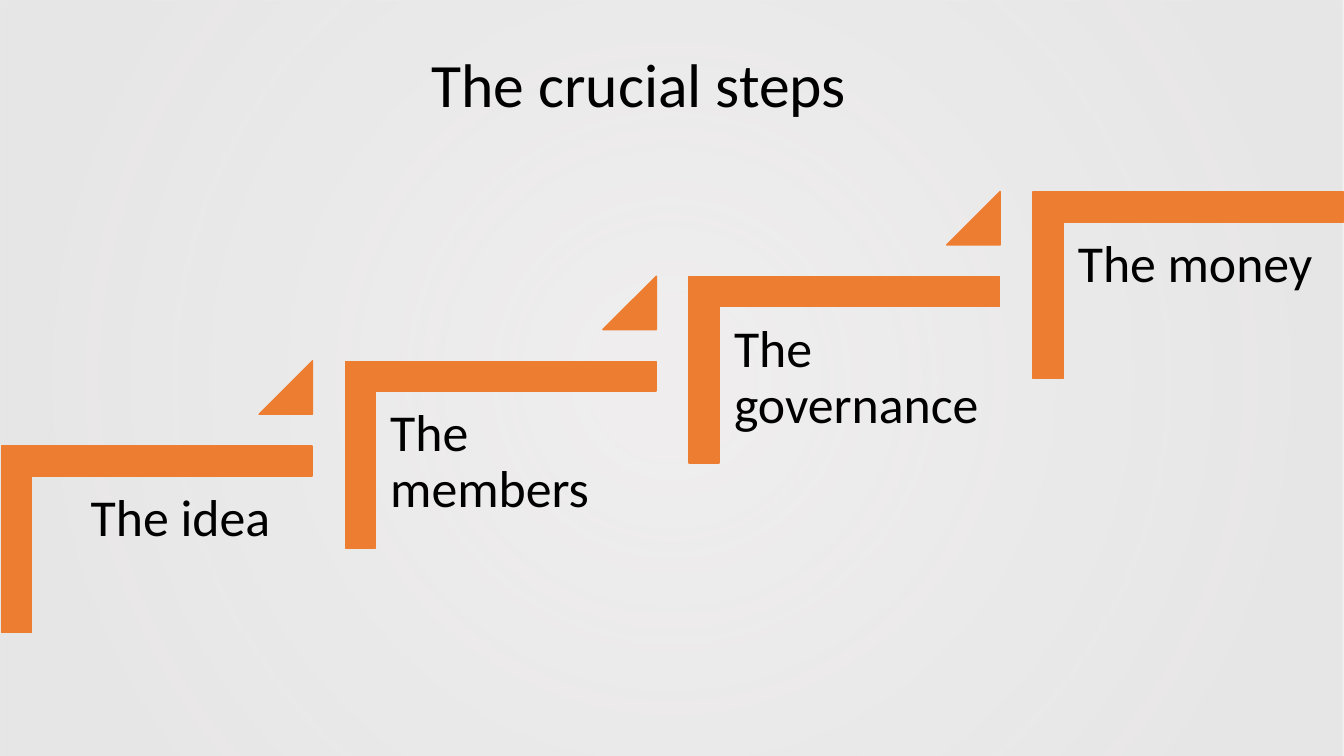
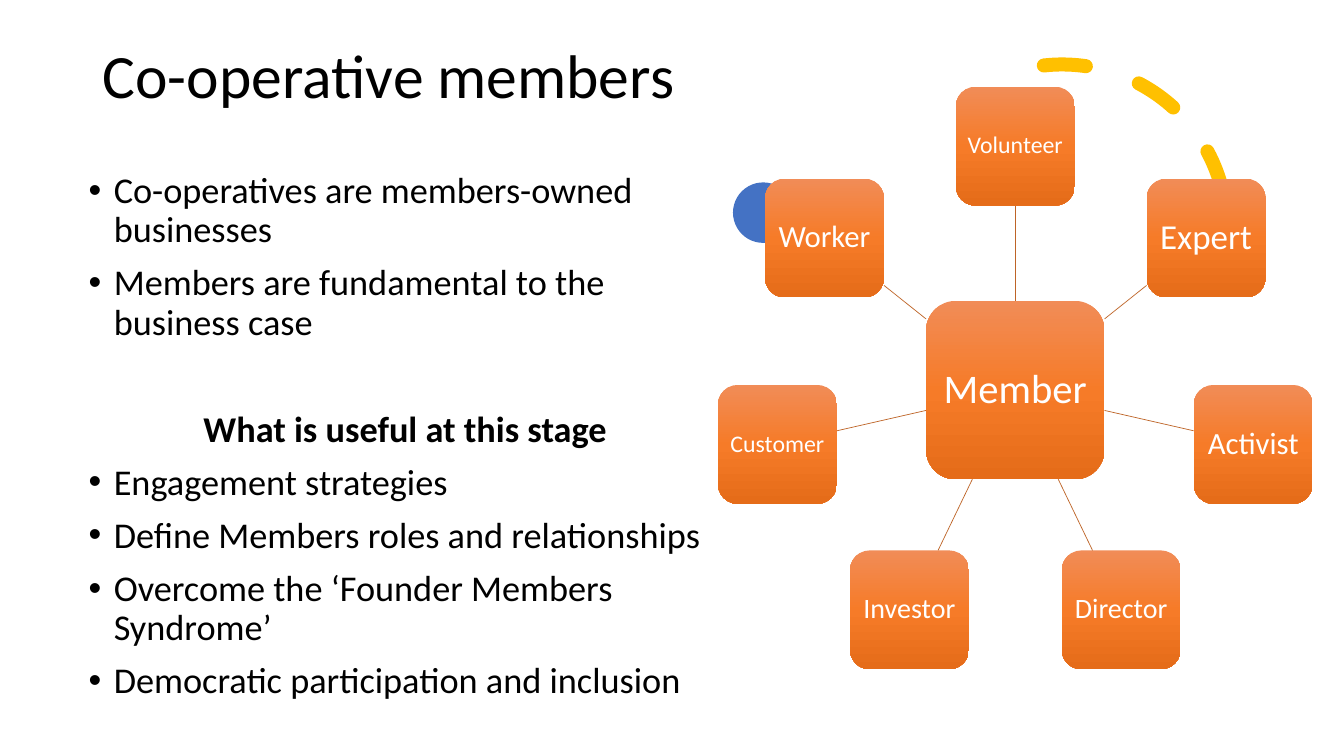
"""Build two slides on the steps and the members of a co-operative."""
from dataclasses import dataclass
from math import cos, radians, sin
from typing import Any

from lxml.etree import SubElement
from pptx import Presentation
from pptx.dml.color import RGBColor
from pptx.enum.dml import MSO_LINE
from pptx.enum.shapes import MSO_CONNECTOR, MSO_SHAPE as SHAPE
from pptx.enum.text import MSO_ANCHOR as ANCHOR, PP_ALIGN as ALIGN
from pptx.oxml.ns import qn
from pptx.util import Inches, Pt

ORANGE, BLUE, YELLOW = "ED7D31", "4472C4", "FFC000"
BLACK, WHITE, SILVER, SPOKE = "000000", "FFFFFF", "E7E6E6", "BE6427"
FONT = "Calibri"
WIDTH, HEIGHT = 13.33, 7.5
TITLE_SIZE, BODY_SIZE, STEP_SIZE, HUB_SIZE = 44, 25.9, 37, 29
CORNER = SHAPE.from_xml("corner")


@dataclass(frozen=True)
class Stop:
    pos: int
    color: str
    alpha: int = 100


@dataclass(frozen=True)
class Step:
    text: str
    indent: float = 0.31


@dataclass(frozen=True)
class Role:
    text: str
    size: float
    inset: float


@dataclass(frozen=True)
class Line:
    text: str
    heading: bool = False


BACKDROP = (Stop(10, SILVER, 68), Stop(85, SILVER, 97))
GLOSS = (Stop(0, "F18C57"), Stop(50, "F67B28"), Stop(100, "E56C19"))

STEPS = (Step("The idea", 0.75), Step("The members"),
         Step("The governance"), Step("The money"))
STEP_DX, STEP_DY = 3.41, -0.84

ROLES = (Role("Volunteer", 17, 0.05), Role("Expert", 25, 0.07),
         Role("Activist", 22, 0.06), Role("Director", 20, 0.06),
         Role("Investor", 20, 0.06), Role("Customer", 17, 0.05),
         Role("Worker", 22, 0.06))
HUB_X, HUB_Y, HUB_SIDE = 10.07, 3.87, 1.77
ROLE_SIDE, RADIUS = 1.18, 2.42

LINES = (
    Line("Co-operatives are members-owned businesses"),
    Line("Members are fundamental to the business case"),
    Line("What is useful at this stage", heading=True),
    Line("Engagement strategies"),
    Line("Define Members roles and relationships"),
    Line("Overcome the ‘Founder Members Syndrome’"),
    Line("Democratic participation and inclusion"),
)


def rgb(color: str) -> RGBColor:
    return RGBColor.from_string(color)


def apply(obj: Any, formats: dict[str, Any]) -> None:
    for name, value in formats.items():
        setattr(obj, name, value)


def add_shape(s: Any, kind: SHAPE, x: float, y: float, w: float, h: float,
              fill: str = "", line: str = "", line_width: float = 1) -> Any:
    sp = s.shapes.add_shape(kind, Inches(x), Inches(y), Inches(w), Inches(h))
    sp.shadow.inherit = False
    if fill:
        sp.fill.solid()
        sp.fill.fore_color.rgb = rgb(fill)
    else:
        sp.fill.background()
    if line:
        sp.line.color.rgb = rgb(line)
        sp.line.width = Pt(line_width)
    else:
        sp.line.fill.background()
    return sp


def set_gradient(sp: Any, stops: tuple[Stop, ...], radial: bool = False) -> None:
    grad = sp._element.spPr.find(qn("a:noFill"))
    grad.tag = qn("a:gradFill")
    stop_list = SubElement(grad, qn("a:gsLst"))
    for stop in stops:
        gs = SubElement(stop_list, qn("a:gs"), pos=str(stop.pos * 1000))
        color = SubElement(gs, qn("a:srgbClr"), val=stop.color)
        if stop.alpha < 100:
            SubElement(color, qn("a:alpha"), val=str(stop.alpha * 1000))
    if radial:
        focus = SubElement(grad, qn("a:path"), path="circle")
        SubElement(focus, qn("a:fillToRect"),
                   {side: "50000" for side in "ltrb"})
    else:
        SubElement(grad, qn("a:lin"), ang="5400000", scaled="0")


def set_frame(tf: Any, inset: float, anchor: ANCHOR) -> None:
    apply(tf, {"word_wrap": True, "vertical_anchor": anchor})
    apply(tf, {f"margin_{side}": Inches(inset)
               for side in ("left", "right", "top", "bottom")})


def write(p: Any, text: str, size: float, color: str = BLACK,
          align: ALIGN = ALIGN.LEFT, bold: bool = False) -> None:
    apply(p, {"alignment": align, "line_spacing": 0.9})
    r = p.add_run()
    r.text = text
    apply(r.font, {"name": FONT, "size": Pt(size), "bold": bold})
    r.font.color.rgb = rgb(color)


def add_box(s: Any, x: float, y: float, w: float, h: float,
            inset: float = 0.1, anchor: ANCHOR = ANCHOR.TOP) -> Any:
    sp = s.shapes.add_textbox(Inches(x), Inches(y), Inches(w), Inches(h))
    set_frame(sp.text_frame, inset, anchor)
    return sp.text_frame


def add_title(s: Any, text: str, x: float, y: float, w: float, h: float,
              anchor: ANCHOR) -> None:
    tf = add_box(s, x, y, w, h, anchor=anchor)
    apply(tf, {"margin_top": Inches(0.05), "margin_bottom": Inches(0.05)})
    write(tf.paragraphs[0], text, TITLE_SIZE)


def add_bullet(p: Any) -> None:
    pPr = p._p.get_or_add_pPr()
    pPr.set("marL", str(Inches(0.25)))
    pPr.set("indent", str(-Inches(0.25)))
    SubElement(pPr, qn("a:buFont"), typeface="Arial")
    SubElement(pPr, qn("a:buChar"), char="•")


def add_step(s: Any, step: Step, x: float, y: float, arrow: bool) -> None:
    sp = add_shape(s, CORNER, x + 0.63, y, 1.85, 3.08, ORANGE, ORANGE)
    sp.rotation = 90
    sp.adjustments[0] = sp.adjustments[1] = 0.16
    tf = add_box(s, x + step.indent, y + 0.92, 2.78, 2.44, 0.15)
    write(tf.paragraphs[0], step.text, STEP_SIZE)
    if arrow:
        sp = add_shape(s, SHAPE.ISOSCELES_TRIANGLE, x + 2.57, y - 0.23,
                       0.53, 0.53, ORANGE, ORANGE)
        sp.adjustments[0] = 1


def add_tile(s: Any, role: Role, cx: float, cy: float, side: float) -> Any:
    sp = add_shape(s, SHAPE.ROUNDED_RECTANGLE, cx - side / 2, cy - side / 2,
                   side, side)
    set_gradient(sp, GLOSS)
    set_frame(sp.text_frame, role.inset, ANCHOR.MIDDLE)
    write(sp.text_frame.paragraphs[0], role.text, role.size, WHITE, ALIGN.CENTER)
    return sp


def add_spoke(s: Any, x1: float, y1: float, x2: float, y2: float) -> Any:
    cn = s.shapes.add_connector(MSO_CONNECTOR.STRAIGHT, Inches(x1), Inches(y1),
                                Inches(x2), Inches(y2))
    cn.line.color.rgb = rgb(SPOKE)
    cn.line.width = Pt(0.5)
    SubElement(cn._element.spPr, qn("a:effectLst"))
    return cn


def add_wheel(s: Any) -> None:
    hub = add_tile(s, Role("Member", HUB_SIZE, 0.08), HUB_X, HUB_Y, HUB_SIDE)
    for i, role in enumerate(ROLES):
        angle = radians(360 * i / len(ROLES))
        dx, dy = sin(angle), -cos(angle)
        reach = 2 * max(abs(dx), abs(dy))
        start, end = HUB_SIDE / reach, RADIUS - ROLE_SIDE / reach
        tile = add_tile(s, role, HUB_X + RADIUS * dx, HUB_Y + RADIUS * dy,
                        ROLE_SIDE)
        cn = add_spoke(s, HUB_X + start * dx, HUB_Y + start * dy,
                       HUB_X + end * dx, HUB_Y + end * dy)
        if i == 0:
            cn.begin_connect(hub, 0)
            cn.end_connect(tile, 2)


def build_steps(s: Any) -> None:
    backdrop = add_shape(s, SHAPE.RECTANGLE, 0, 0, WIDTH, HEIGHT)
    set_gradient(backdrop, BACKDROP, radial=True)
    add_title(s, "The crucial steps", 4.18, 0.33, 7.79, 1.08, ANCHOR.MIDDLE)
    for i, step in enumerate(STEPS):
        add_step(s, step, i * STEP_DX, 3.81 + i * STEP_DY, i < len(STEPS) - 1)


def build_members(s: Any) -> None:
    add_title(s, "Co-operative members", 0.92, 0.4, 5.89, 1.45, ANCHOR.TOP)
    tf = add_box(s, 0.78, 1.66, 6.48, 5.43)
    apply(tf, {"margin_top": Inches(0.05), "margin_bottom": Inches(0.05)})
    for i, line in enumerate(LINES):
        p = tf.add_paragraph() if i else tf.paragraphs[0]
        write(p, line.text, BODY_SIZE, bold=line.heading,
              align=ALIGN.CENTER if line.heading else ALIGN.LEFT)
        p.space_before = Pt(48.4 if line.heading else 10)
        if not line.heading:
            add_bullet(p)
    add_shape(s, SHAPE.OVAL, 7.27, 1.81, 0.6, 0.6, BLUE)
    arc = add_shape(s, SHAPE.ARC, 8.9, 0.64, 3.27, 3.27, line=YELLOW,
                    line_width=10)
    arc.adjustments[0], arc.adjustments[1] = 158.17, 17.81
    arc.line.dash_style = MSO_LINE.DASH
    arc.line._get_or_add_ln().set("cap", "rnd")
    add_wheel(s)


def main() -> None:
    prs = Presentation()
    apply(prs, {"slide_width": Inches(WIDTH), "slide_height": Inches(HEIGHT)})
    for build in (build_steps, build_members):
        build(prs.slides.add_slide(prs.slide_layouts[6]))
    prs.save("out.pptx")


if __name__ == "__main__":
    main()
